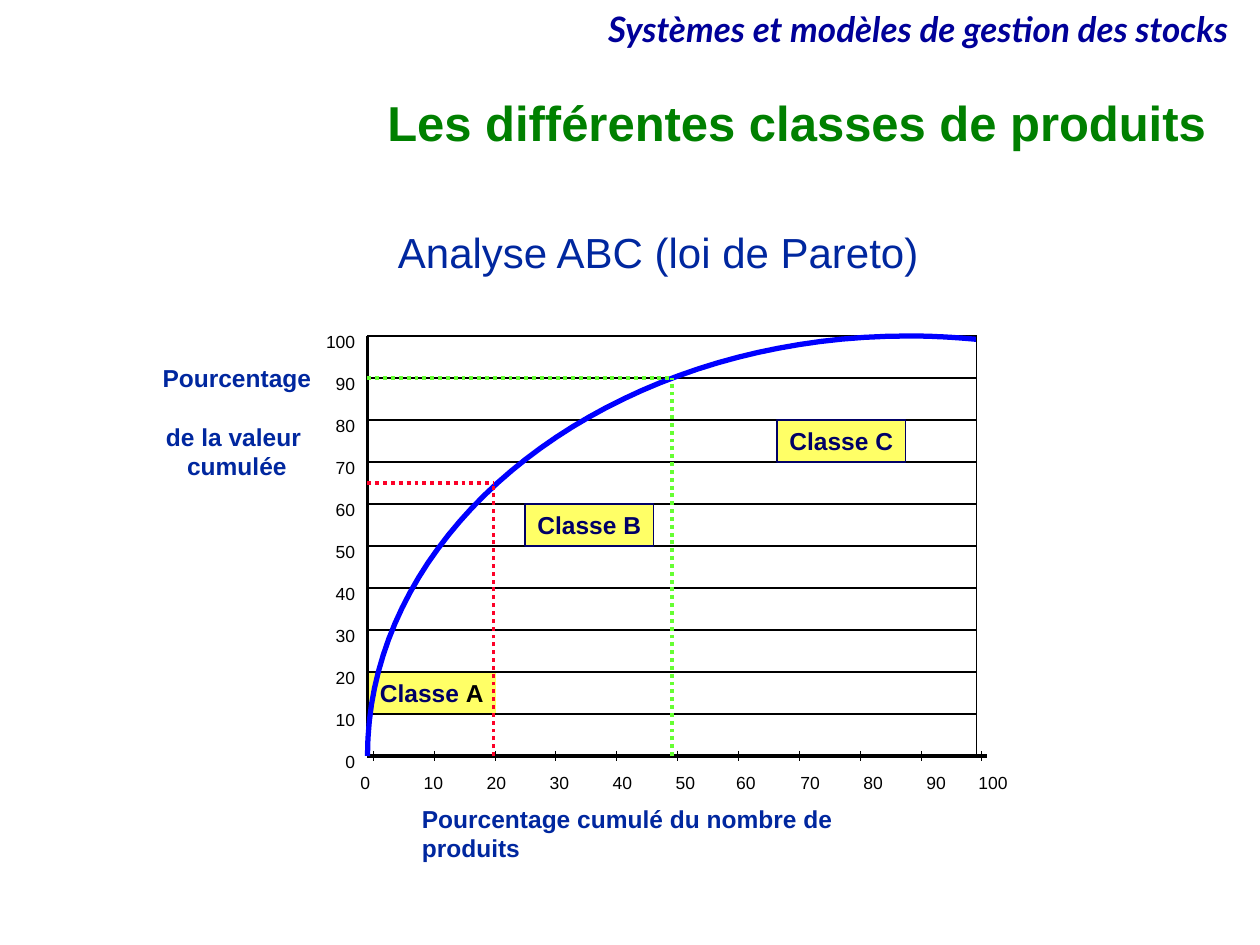
from copy import deepcopy
from pptx import Presentation
from pptx.dml.color import RGBColor
from pptx.enum.dml import MSO_LINE_DASH_STYLE as Dash
from pptx.enum.shapes import MSO_CONNECTOR as Connector, MSO_SHAPE as Shape
from pptx.enum.text import MSO_ANCHOR as Anchor, MSO_AUTO_SIZE as AutoSize, PP_ALIGN as Align
from pptx.oxml.ns import qn
from pptx.util import Inches, Pt

CELL = 1 / 3
LEFT, BOTTOM = 8.75 * CELL, 6
GRID_RIGHT, AXIS_RIGHT, ROWS = 14.5, 14.75, 10
PERCENT_CENTERS = (2.89, 3.43, 3.93, 4.43, 4.93, 5.43, 5.91, 6.42, 6.92, 7.42, 7.87)
NAVY, BLUE, BLACK, YELLOW = "000066", "00279F", "000000", "FFFF66"


def color(hex_value):
    return RGBColor.from_string(hex_value)


def column(cells):
    return LEFT + cells * CELL


def row(cells):
    return BOTTOM - cells * CELL


def write(frame, text, size, ink, font="Arial", bold=False, italic=False,
          align=Align.LEFT, wrap=False, spacing=None, anchor=Anchor.TOP):
    frame.word_wrap = wrap
    frame.vertical_anchor = anchor
    paragraph = frame.paragraphs[0]
    paragraph.text = text
    paragraph.alignment = align
    if spacing:
        paragraph.line_spacing = spacing
    for run in paragraph.runs:
        run.font.name = font
        run.font.size = Pt(size)
        run.font.bold = bold
        run.font.italic = italic
        run.font.color.rgb = color(ink)
    for line_break in paragraph._p.findall(qn("a:br")):
        line_break.append(deepcopy(paragraph.runs[0]._r.rPr))
    return paragraph


def add_label(slide, box, text, size, ink, **style):
    label = slide.shapes.add_textbox(*map(Inches, box))
    write(label.text_frame, text, size, ink, **style)
    label.text_frame.auto_size = AutoSize.SHAPE_TO_FIT_TEXT


def add_line(slide, start, end, ink=BLACK, width=1, dash=None):
    line = slide.shapes.add_connector(Connector.STRAIGHT, *map(Inches, (*start, *end)))
    line.line.color.rgb = color(ink)
    line.line.width = Pt(width)
    if dash:
        line.line.dash_style = dash
    properties = line._element.spPr
    properties.append(properties.makeelement(qn("a:effectLst"), {}))


def add_class(slide, text, x, y, border=None):
    tag = slide.shapes.add_shape(
        Shape.RECTANGLE, *map(Inches, (column(x), row(y), 1.02, CELL)))
    tag.shadow.inherit = False
    tag.fill.solid()
    tag.fill.fore_color.rgb = color(YELLOW)
    if border:
        tag.line.color.rgb = color(border)
        tag.line.width = Pt(0.75)
    else:
        tag.line.fill.background()
    return write(tag.text_frame, text, 14, NAVY, bold=True)


def bezier(points, steps=40):
    for step in range(1, steps + 1):
        t = step / steps
        weights = ((1 - t) ** 3, 3 * t * (1 - t) ** 2, 3 * t * t * (1 - t), t ** 3)
        x, y = (sum(w * p[axis] for w, p in zip(weights, points)) for axis in (0, 1))
        yield Inches(column(x)), Inches(row(y))


def add_pareto_curve(slide):
    rise = ((0, 0), (0, 5.52), (5.77, 10), (12.88, 10))
    plateau = ((12.88, 10), (13.42, 10), (13.96, 9.97), (14.5, 9.92))
    builder = slide.shapes.build_freeform(Inches(LEFT), Inches(BOTTOM))
    builder.add_line_segments([*bezier(rise), *bezier(plateau)], close=False)
    curve = builder.convert_to_shape()
    curve.shadow.inherit = False
    curve.fill.background()
    curve.line.color.rgb = color("0000FF")
    curve.line.width = Pt(3)


def add_axes(slide):
    for index, center in enumerate(PERCENT_CENTERS):
        tick = 2.96 + 0.483 * index
        add_line(slide, (tick, 5.96), (tick, 6.04), width=0.1)
        percent = str(10 * index)
        width = 0.21 + 0.08 * len(percent)
        for x, y in ((center - width / 2, 6.08), (LEFT - width, row(index) - 0.09)):
            add_label(slide, (x, y, width, 0.27), percent, 10, BLACK, align=Align.RIGHT)
    add_line(slide, (LEFT, BOTTOM), (LEFT, row(ROWS)), width=2.25)
    add_line(slide, (LEFT, BOTTOM), (column(AXIS_RIGHT), BOTTOM), width=2.25)
    for level in range(1, ROWS + 1):
        add_line(slide, (LEFT, row(level)), (column(GRID_RIGHT), row(level)))


def add_threshold(slide, x, y, ink):
    corner = column(x), row(y)
    for foot in ((corner[0], BOTTOM), (LEFT, corner[1])):
        add_line(slide, foot, corner, ink, 2.25, Dash.ROUND_DOT)


def add_headings(slide):
    add_label(slide, (3.58, 0.05, 6.27, 0.4), "Systèmes et modèles de gestion des stocks",
              20, "000099", font="Lato", bold=True, italic=True, align=Align.RIGHT,
              wrap=True, spacing=0.9)
    title = slide.shapes.title
    title.left, title.top, title.width, title.height = map(Inches, (1.75, 0.75, 7.92, 0.5))
    write(title.text_frame, "Les différentes classes de produits", 28, "008000",
          bold=True, align=Align.RIGHT, wrap=True, spacing=0.9, anchor=Anchor.MIDDLE)
    add_label(slide, (3.06, 1.75, 4.35, 0.5), "Analyse ABC (loi de Pareto)", 24, BLUE)
    add_label(slide, (1.17, 2.83, 1.42, 0.8), "Pourcentage \vde la valeur \vcumulée",
              14, BLUE, bold=True, align=Align.CENTER, wrap=True)
    add_label(slide, (3.25, 6.33, 4.2, 0.33), "Pourcentage cumulé du nombre de produits",
              14, BLUE, bold=True, wrap=True)


def main():
    deck = Presentation()
    deck.slide_width, deck.slide_height = Inches(10), Inches(7.5)
    slide = deck.slides.add_slide(deck.slide_layouts[5])
    add_headings(slide)
    class_a = add_class(slide, "Classe ", 0, 2)
    letter = class_a.add_run()
    letter.text = "A"
    letter.font.name, letter.font.size, letter.font.bold = "Arial", Pt(14), True
    letter.font.color.rgb = color(BLACK)
    add_axes(slide)
    add_pareto_curve(slide)
    add_threshold(slide, 3, 6.5, "FC0128")
    add_threshold(slide, 7.25, 9, "66FF33")
    add_class(slide, "Classe B", 3.75, 6, NAVY)
    add_class(slide, "Classe C", 9.75, 8, NAVY)
    add_line(slide, (column(GRID_RIGHT), BOTTOM), (column(GRID_RIGHT), row(ROWS)))
    deck.save("out.pptx")


if __name__ == "__main__":
    main()
